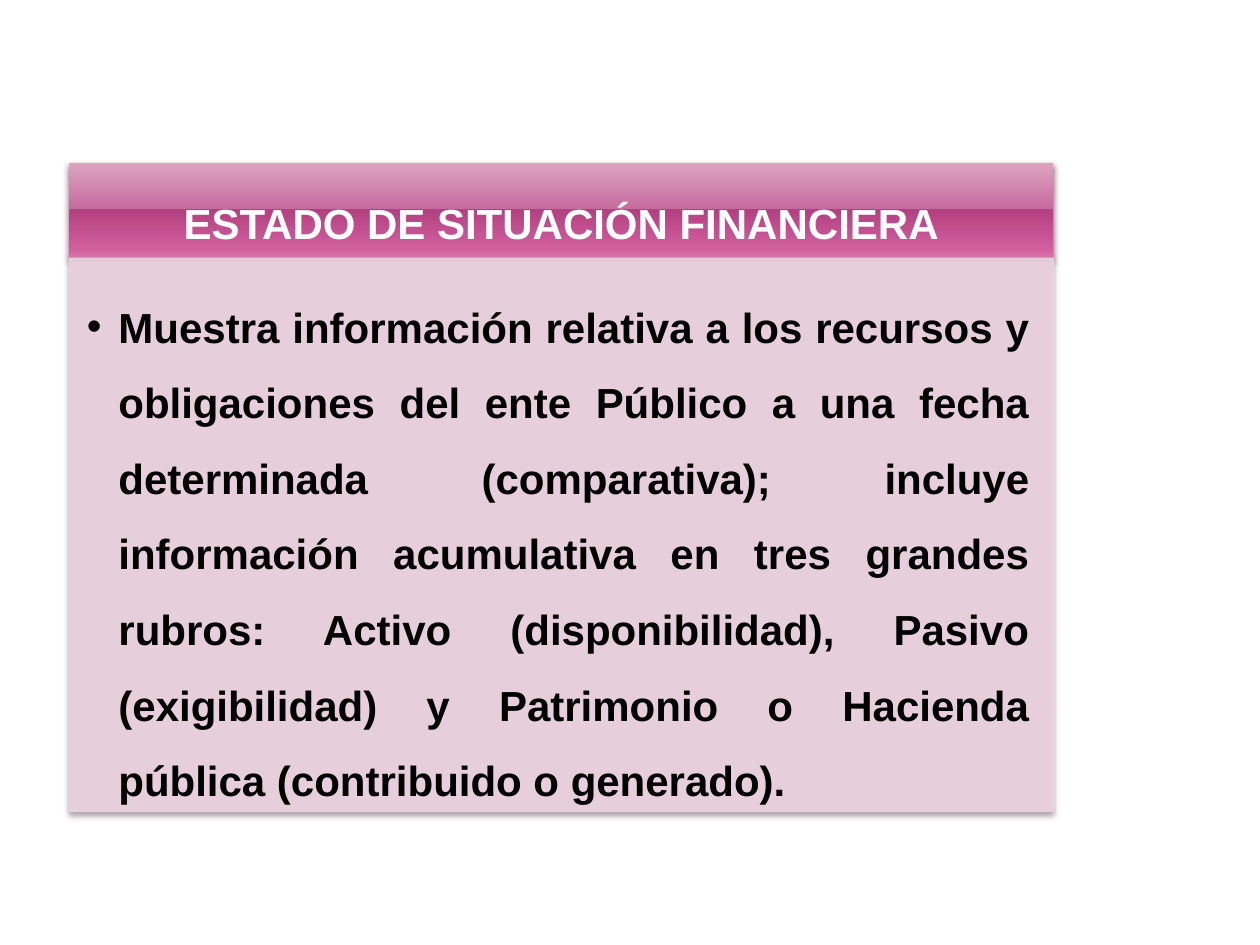
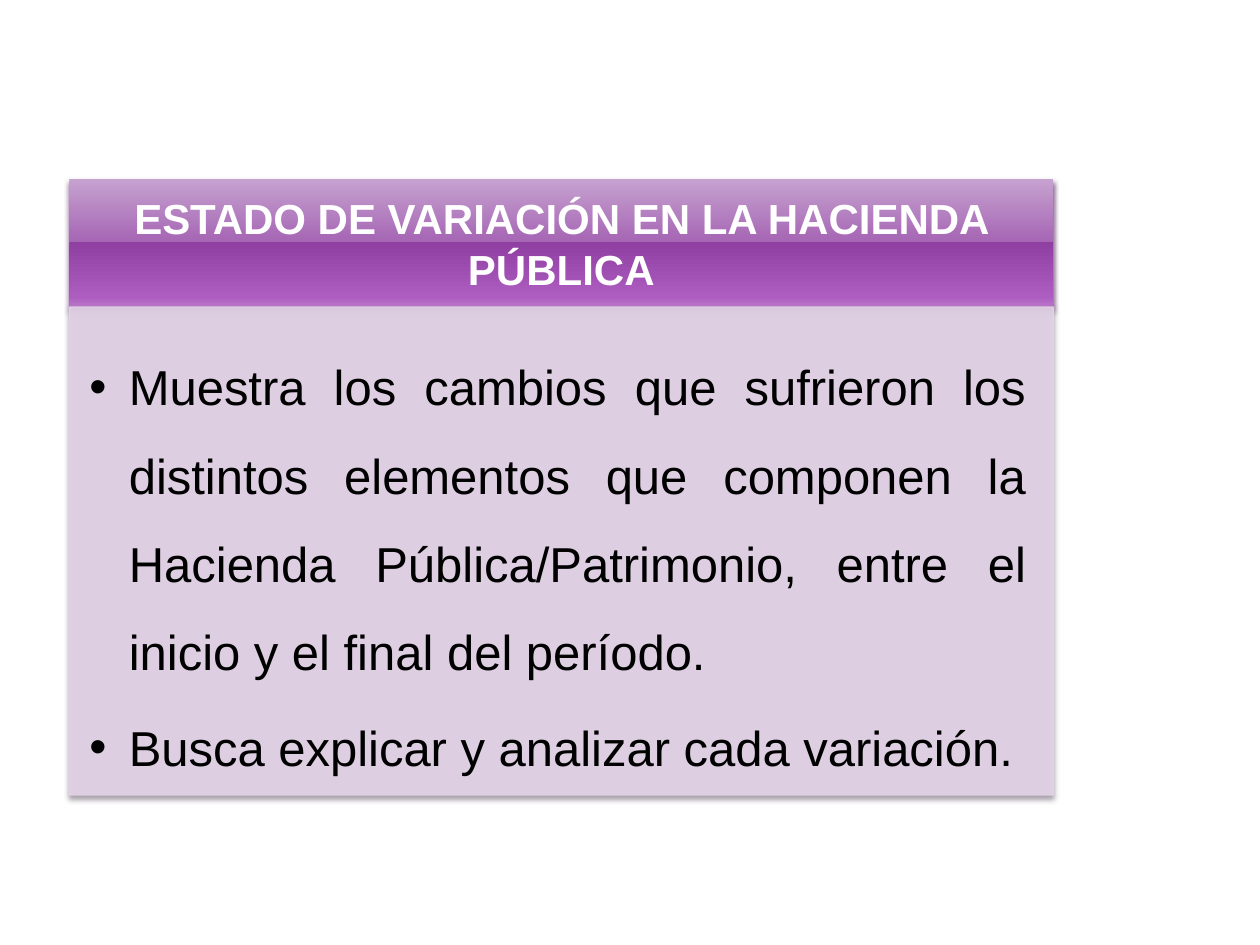
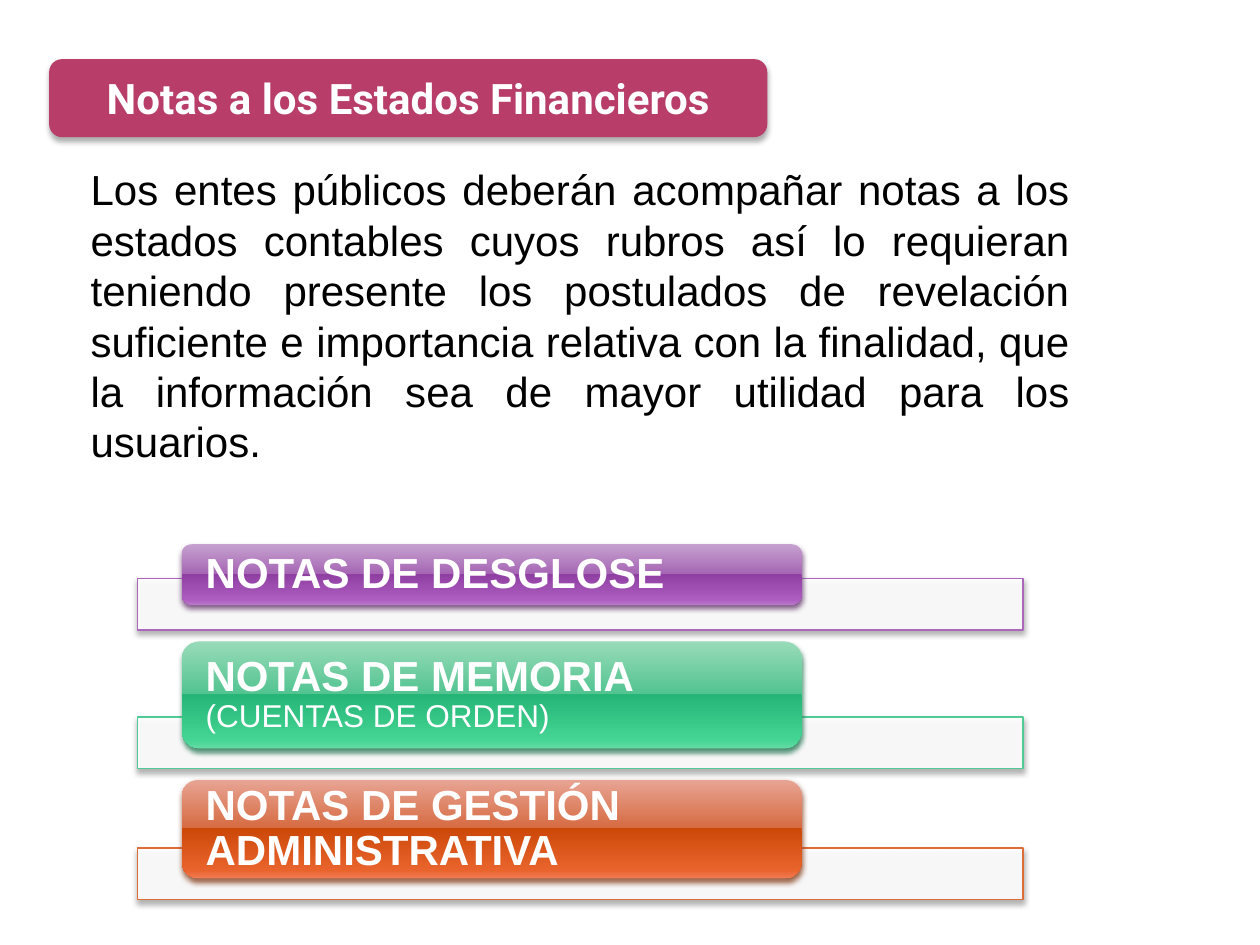
from lxml import etree
from pptx import Presentation
from pptx.dml.color import RGBColor
from pptx.enum.shapes import MSO_SHAPE
from pptx.enum.text import MSO_ANCHOR, MSO_AUTO_SIZE, PP_ALIGN
from pptx.oxml.ns import qn
from pptx.util import Pt

RECTANGLE = MSO_SHAPE.RECTANGLE
ROUNDED = MSO_SHAPE.ROUNDED_RECTANGLE
TOP, MIDDLE = MSO_ANCHOR.TOP, MSO_ANCHOR.MIDDLE
LEFT, CENTER, JUSTIFY = PP_ALIGN.LEFT, PP_ALIGN.CENTER, PP_ALIGN.JUSTIFY
NO_AUTOFIT = MSO_AUTO_SIZE.NONE

COLORS = {
    "white": "FFFFFF",
    "black": "000000",
    "raspberry": "B83D68",
    "pink_shadow": "804365",
    "pink_panel": "EDD4E0",
    "pink_panel_shadow": "93838B",
    "purple_shadow": "6A3F73",
    "purple_panel": "E3D3E7",
    "purple_panel_shadow": "8C828F",
    "purple_line": "AC66BB",
    "green_shadow": "317E5D",
    "green_line": "4FCC96",
    "orange_shadow": "894321",
    "orange_line": "DE6C36",
    "bar_shadow": "9D9D9D",
}
GRADIENTS = {
    "pink": ["DDA4C1", "C66B9D", "B34181", "D361A0", "DC79AE"],
    "purple": ["C6A2D0", "A666B4", "8F3EA1", "AD5DBF", "BA76CA"],
    "green": ["99DBB9", "53C491", "24B577", "44D494", "64DCA3"],
    "orange": ["E7A493", "D66B42", "CC4809", "E9642C", "F07B55"],
}
GRADIENT_STOPS = [0, 49, 49, 92, 100]


def add_panel(slide, geometry, box, fill, shadow, line=None, opacity=100,
              line_opacity=100, shadow_format=(83, 3.1, 2)):
    shape = slide.shapes.add_shape(geometry, *[Pt(value) for value in box])
    properties = shape.element.spPr
    if fill in GRADIENTS:
        shape.fill.gradient()
        shape.fill.gradient_angle = 270
        stops = properties.find(".//" + qn("a:gsLst"))
        for stop in list(stops):
            stops.remove(stop)
        for position, color in zip(GRADIENT_STOPS, GRADIENTS[fill]):
            stop = etree.SubElement(stops, qn("a:gs"), pos=str(position * 1000))
            etree.SubElement(stop, qn("a:srgbClr"), val=color)
    else:
        shape.fill.solid()
        shape.fill.fore_color.rgb = RGBColor.from_string(COLORS[fill])
    if line:
        shape.line.color.rgb = RGBColor.from_string(COLORS[line])
        shape.line.width = Pt(0.9)
    else:
        shape.line.fill.background()
    for tag, value in (("a:solidFill", opacity), ("a:ln/a:solidFill", line_opacity)):
        if value < 100:
            steps = [qn(step) for step in tag.split("/")] + [qn("a:srgbClr")]
            color = properties.find("/".join(steps))
            etree.SubElement(color, qn("a:alpha"), val=str(value * 1000))
    shape.shadow.inherit = False
    strength, blur, distance = shadow_format
    outer = etree.SubElement(
        properties.find(qn("a:effectLst")), qn("a:outerShdw"),
        blurRad=str(int(Pt(blur))), dist=str(int(Pt(distance))),
        dir="5400000", algn="ctr", rotWithShape="0")
    color = etree.SubElement(outer, qn("a:srgbClr"), val=COLORS[shadow])
    etree.SubElement(color, qn("a:alpha"), val=str(strength * 1000))
    return shape


def write_text(shape, *texts, box=None, size=24, font="Arial", color="black", bold=False,
               align=JUSTIFY, anchor=TOP, margins=(7.2, 3.6, 7.2, 3.6),
               spacing=1.0, after=0, bullet_indent=0):
    if box:
        shape.left, shape.top, shape.width, shape.height = [Pt(value) for value in box]
    frame = shape.text_frame
    frame.word_wrap = True
    frame.auto_size = NO_AUTOFIT
    frame.vertical_anchor = anchor
    (frame.margin_left, frame.margin_top,
     frame.margin_right, frame.margin_bottom) = [Pt(value) for value in margins]
    for index, text in enumerate(texts):
        paragraph = frame.add_paragraph() if index else frame.paragraphs[0]
        paragraph.text = text
        properties = paragraph._p.get_or_add_pPr()
        properties.set("marL", str(int(Pt(bullet_indent))))
        properties.set("indent", str(-int(Pt(bullet_indent))))
        if bullet_indent:
            etree.SubElement(properties, qn("a:buChar"), char="•")
        else:
            etree.SubElement(properties, qn("a:buNone"))
        paragraph.alignment = align
        paragraph.line_spacing = spacing
        paragraph.space_before = Pt(0)
        paragraph.space_after = Pt(after)
        for run in paragraph.runs:
            run.font.name = font
            run.font.size = Pt(size)
            run.font.bold = bold
            run.font.color.rgb = RGBColor.from_string(COLORS[color])


presentation = Presentation()
presentation.slide_width = Pt(720)
presentation.slide_height = Pt(540)
layout = presentation.slide_layouts[1]

statements = [
    {
        "theme": "pink",
        "title": "ESTADO DE SITUACIÓN FINANCIERA",
        "title_spacing": 1.5,
        "top": 92.9, "band_height": 54.7, "panel_height": 316.1,
        "points": [
            "Muestra información relativa a los recursos y obligaciones del ente Público "
            "a una fecha determinada (comparativa); incluye información acumulativa en tres "
            "grandes rubros: Activo (disponibilidad), Pasivo (exigibilidad) y Patrimonio o "
            "Hacienda pública (contribuido o generado).",
        ],
        "format": {"size": 24, "bold": True, "after": 3.6, "bullet_indent": 18,
                   "margins": (10.1, 10.1, 13.7, 15.1)},
    },
    {
        "theme": "purple",
        "title": "ESTADO DE VARIACIÓN EN LA HACIENDA PÚBLICA",
        "title_spacing": 1.0,
        "top": 102.2, "band_height": 73.4, "panel_height": 278.6,
        "points": [
            "Muestra los cambios que sufrieron los distintos elementos que componen la "
            "Hacienda Pública/Patrimonio, entre el inicio y el final del período.",
            "Busca explicar y analizar cada variación.",
        ],
        "format": {"size": 28, "after": 4.2, "bullet_indent": 22.5,
                   "margins": (11.5, 11.5, 15.8, 17.3)},
    },
]

for statement in statements:
    slide = presentation.slides.add_slide(layout)
    theme = statement["theme"]
    band_box = (39.6, statement["top"], 562.3, statement["band_height"])
    panel_box = (39.6, statement["top"] + statement["band_height"],
                 562.3, statement["panel_height"])
    add_panel(slide, RECTANGLE, band_box, theme, theme + "_shadow")
    add_panel(slide, RECTANGLE, panel_box, theme + "_panel", theme + "_panel_shadow",
              line=theme + "_panel", opacity=90, line_opacity=90)
    title, body = slide.placeholders
    write_text(title, statement["title"], box=band_box, color="white", bold=True,
               align=CENTER, anchor=MIDDLE, margins=(13.7, 7.9, 13.7, 7.9),
               spacing=statement["title_spacing"])
    write_text(body, *statement["points"], box=panel_box, spacing=1.5,
               **statement["format"])
    for placeholder in (title, body):
        slide.shapes.element.append(placeholder.element)

slide = presentation.slides.add_slide(layout)
title, body = slide.placeholders
notes = [
    ("purple", "NOTAS DE DESGLOSE", 330.5, 311, 34.6),
    ("green", "NOTAS DE MEMORIA\v(CUENTAS DE ORDEN)", 409.7, 366.5, 61.2),
    ("orange", "NOTAS DE GESTIÓN ADMINISTRATIVA", 484.6, 445.7, 56.2),
]
for theme, text, bar_top, label_top, label_height in notes:
    add_panel(slide, RECTANGLE, (78.5, bar_top, 506.2, 29.5), "white", "bar_shadow",
              line=theme + "_line", opacity=90)
    label = add_panel(slide, ROUNDED, (103.9, label_top, 354.2, label_height),
                      theme, theme + "_shadow")
    side_margin = 13.7 - 0.05 * label_height
    write_text(label, text, color="white", bold=True, align=LEFT, anchor=MIDDLE,
               margins=(side_margin, 0, side_margin, 0), spacing=0.9)
    for run in label.text_frame.paragraphs[0].runs[1:]:
        run.font.size = Pt(18)
        run.font.bold = False

write_text(body,
           "Los entes públicos deberán acompañar notas a los estados contables cuyos rubros "
           "así lo requieran teniendo presente los postulados de revelación suficiente e "
           "importancia relativa con la finalidad, que la información sea de mayor utilidad "
           "para los usuarios.",
           box=(44.6, 90, 573.8, 181.4))
heading_box = (28.1, 33.8, 410.4, 44.6)
add_panel(slide, ROUNDED, heading_box, "raspberry", "black", shadow_format=(32, 3.5, 2.2))
write_text(title, "Notas a los Estados Financieros", box=heading_box, font="Roboto",
           color="white", bold=True, align=CENTER, anchor=MIDDLE)
for placeholder in (body, title):
    slide.shapes.element.append(placeholder.element)

presentation.save("out.pptx")
